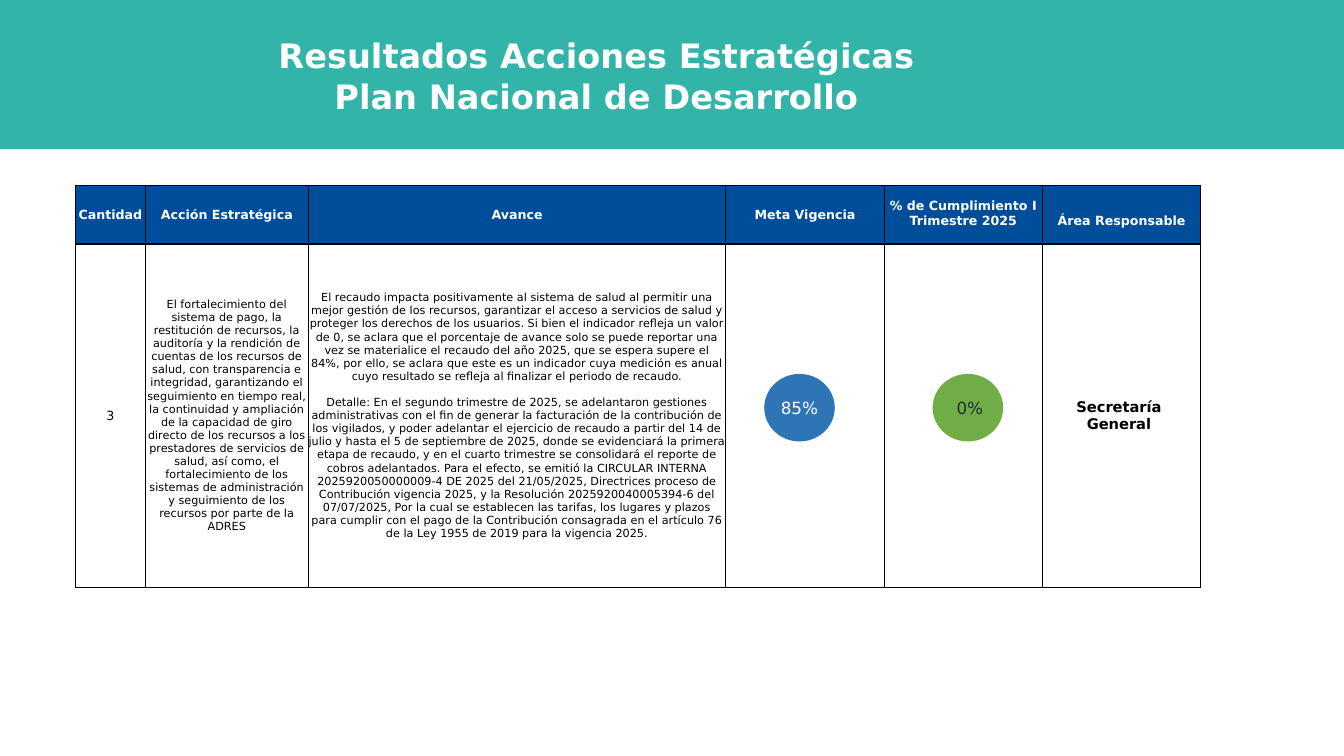
from lxml.etree import SubElement
from pptx import Presentation
from pptx.dml.color import RGBColor
from pptx.enum.shapes import MSO_SHAPE as Shape
from pptx.enum.text import MSO_ANCHOR as Anchor, PP_ALIGN as Align
from pptx.oxml.ns import qn
from pptx.util import Inches, Pt

FONT = "DejaVu Sans"
WHITE, BLACK, NAVY, TEAL = "FFFFFF", "000000", "004E9A", "32B4A8"
BLUE, GREEN, DARK = "2E75B6", "70AD47", "222A35"

COLUMNS = [0.69, 1.62, 4.14, 1.57, 1.57, 1.57]
ROWS = [0.58, 3.41]
HEADERS = ["Cantidad", "Acción Estratégica", "Avance", "Meta Vigencia",
           "% de Cumplimiento I Trimestre 2025", "Área Responsable"]
ACTION = (
    "El fortalecimiento del sistema de pago, la restitución de recursos, la auditoría y la "
    "rendición de cuentas de los recursos de salud, con transparencia e integridad, "
    "garantizando el seguimiento en tiempo real, la continuidad y ampliación de la capacidad "
    "de giro directo de los recursos a los prestadores de servicios de salud, así como, el "
    "fortalecimiento de los sistemas de administración y seguimiento de los recursos por "
    "parte de la ADRES")
PROGRESS = (
    "El recaudo impacta positivamente al sistema de salud al permitir una mejor gestión de "
    "los recursos, garantizar el acceso a servicios de salud y proteger los derechos de los "
    "usuarios. Si bien el indicador refleja un valor de 0, se aclara que el porcentaje de "
    "avance solo se puede reportar una vez se materialice el recaudo del año 2025, que se "
    "espera supere el 84%, por ello, se aclara que este es un indicador cuya medición es "
    "anual cuyo resultado se refleja al finalizar el periodo de recaudo.")
DETAIL = (
    "Detalle: En el segundo trimestre de 2025, se adelantaron gestiones administrativas con "
    "el fin de generar la facturación de la contribución de los vigilados, y poder adelantar "
    "el ejercicio de recaudo a partir del 14 de julio y hasta el 5 de septiembre de 2025, "
    "donde se evidenciará la primera etapa de recaudo, y en el cuarto trimestre se "
    "consolidará el reporte de cobros adelantados. Para el efecto, se emitió la CIRCULAR "
    "INTERNA 2025920050000009-4 DE 2025 del 21/05/2025, Directrices proceso de Contribución "
    "vigencia 2025, y la Resolución 2025920040005394-6 del 07/07/2025, Por la cual se "
    "establecen las tarifas, los lugares y plazos para cumplir con el pago de la "
    "Contribución consagrada en el artículo 76 de la Ley 1955 de 2019 para la vigencia 2025.")


def rgb(value):
    return RGBColor.from_string(value)


def write(frame, text, size, color, bold=False):
    frame.text = text
    for para in frame.paragraphs:
        para.alignment = Align.CENTER
        para.line_spacing = 1.0
        for span in para.runs:
            span.font.name = FONT
            span.font.size = Pt(size)
            span.font.bold = bold
            span.font.color.rgb = rgb(color)


def add_filled(page, kind, left, top, width, height, color):
    shape = page.shapes.add_shape(
        kind, Inches(left), Inches(top), Inches(width), Inches(height))
    shape.shadow.inherit = False
    shape.fill.solid()
    shape.fill.fore_color.rgb = rgb(color)
    shape.line.fill.background()
    return shape


def add_heading(page):
    """Place the title in front of its coloured band."""
    band = add_filled(page, Shape.RECTANGLE, 0, 0, 13.33, 1.48, TEAL)
    title = page.shapes.title
    band.element.addnext(title.element)
    title.left, title.top = Inches(2.5), Inches(0.3)
    title.width, title.height = Inches(6.83), Inches(0.91)
    frame = title.text_frame
    frame.word_wrap = True
    frame.vertical_anchor = Anchor.TOP
    write(frame, "Resultados Acciones Estratégicas Plan Nacional de Desarrollo", 24, WHITE, True)


def add_borders(cell, bottom):
    properties = cell._tc.get_or_add_tcPr()
    for side, width in (("L", 1), ("R", 1), ("T", 1), ("B", bottom)):
        line = SubElement(properties, qn(f"a:ln{side}"), w=str(Pt(width)))
        fill = SubElement(line, qn("a:solidFill"))
        SubElement(fill, qn("a:srgbClr"), val=BLACK)


def format_cell(cell, bottom_border, fill=None):
    add_borders(cell, bottom_border)
    cell.margin_left = cell.margin_right = cell.margin_top = cell.margin_bottom = 0
    cell.vertical_anchor = Anchor.MIDDLE
    if fill:
        cell.fill.solid()
        cell.fill.fore_color.rgb = rgb(fill)
    else:
        cell.fill.background()


def add_results_table(page):
    table = page.shapes.add_table(
        len(ROWS), len(COLUMNS), Inches(0.75), Inches(1.84),
        Inches(sum(COLUMNS)), Inches(sum(ROWS))).table
    for column, width in zip(table.columns, COLUMNS):
        column.width = Inches(width)
    for row, height in zip(table.rows, ROWS):
        row.height = Inches(height)

    for index, header in enumerate(HEADERS):
        cell = table.cell(0, index)
        format_cell(cell, 2, NAVY)
        write(cell.text_frame, header, 9, WHITE, True)
        if index >= 4:
            cell.vertical_anchor = Anchor.BOTTOM
            cell.margin_bottom = Inches(0.15)

    progress = "\n".join([PROGRESS, DETAIL])
    body = [("3", 9, False), (ACTION, 8, False), (progress, 8, False),
            ("", 9, False), ("", 9, False), ("Secretaría General", 10.5, True)]
    for index, (text, size, bold) in enumerate(body):
        cell = table.cell(1, index)
        format_cell(cell, 1)
        write(cell.text_frame, text, size, BLACK, bold)
    table.cell(1, 2).text_frame.paragraphs[1].space_before = Pt(9.4)
    area = table.cell(1, 5)
    area.margin_left, area.margin_right = Inches(0.2), Inches(0.25)


def add_indicator(page, left, text, fill, color, indent=0):
    circle = add_filled(page, Shape.OVAL, left, 3.71, 0.7, 0.67, fill)
    frame = circle.text_frame
    frame.word_wrap = False
    frame.vertical_anchor = Anchor.MIDDLE
    frame.margin_left = Inches(indent)
    frame.margin_right = frame.margin_top = frame.margin_bottom = 0
    write(frame, text, 12, color)


def main():
    deck = Presentation()
    deck.slide_width, deck.slide_height = Inches(13.33), Inches(7.5)
    page = deck.slides.add_slide(deck.slide_layouts[5])
    add_heading(page)
    add_results_table(page)
    add_indicator(page, 9.25, "0%", GREEN, DARK, indent=0.04)
    add_indicator(page, 7.58, "85%", BLUE, WHITE)
    deck.save("out.pptx")


if __name__ == "__main__":
    main()
